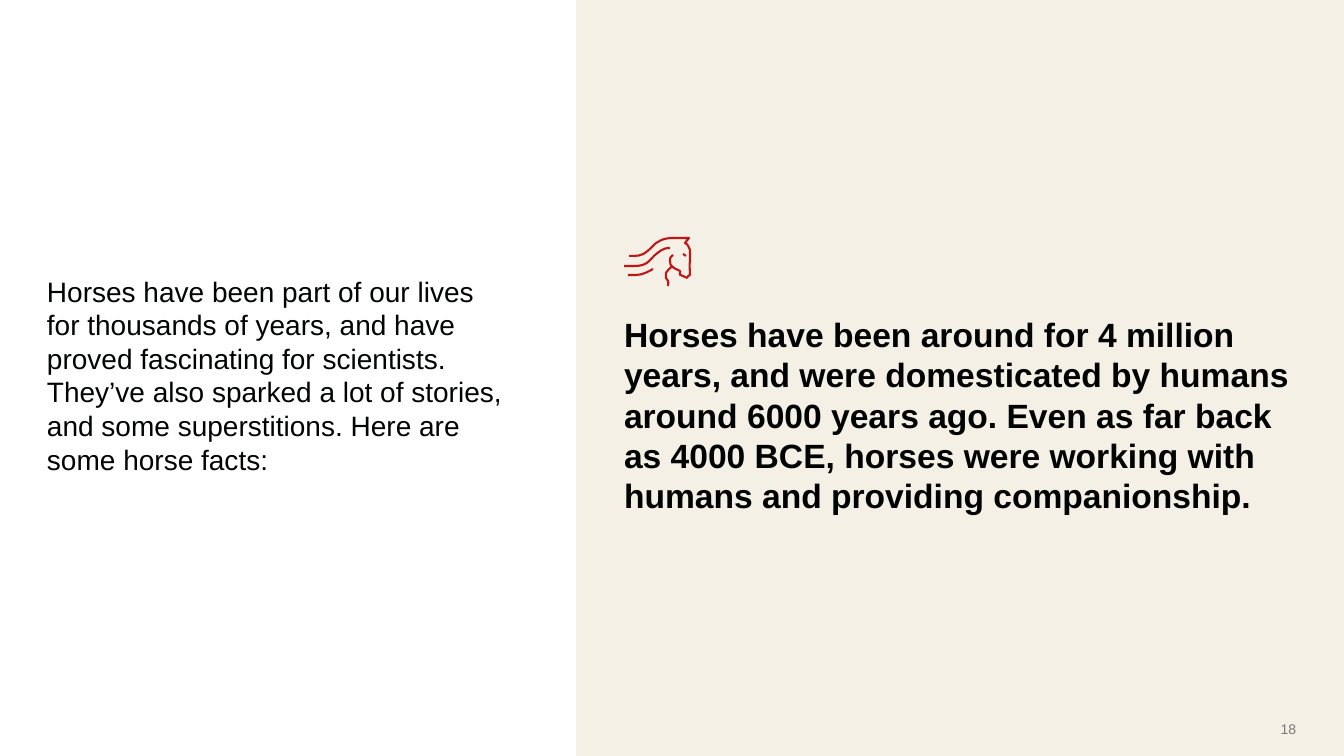
import lxml.etree
import pptx
import pptx.dml.color
import pptx.enum.shapes
import pptx.enum.text
import pptx.oxml.ns
import pptx.util

PX = 9144000 / 1008
ALIGN = pptx.enum.text.PP_ALIGN
ANCHOR = pptx.enum.text.MSO_ANCHOR

INTRO = (
    "Horses have been part of our lives \vfor thousands of years, and have "
    "proved fascinating for scientists. They’ve also sparked a lot of stories, "
    "and some superstitions. Here are some horse facts:"
)
FACT = (
    "Horses have been around for 4 million years, and were domesticated by "
    "humans around 6000 years ago. Even as far back as 4000 BCE, horses were "
    "working with humans and providing companionship."
)

# Each stroke is a start point, then three points for every cubic segment.
HORSE_STROKES = {
    "head and mane": [
        (673, 255),
        (671, 256), (669, 259), (670, 261),
        (670, 263), (670, 266), (674, 268),
        (676, 269), (678, 270), (680, 271),
        (680, 272), (680, 274), (680, 275),
        (681, 275), (685, 277), (687, 278),
        (687, 277), (689, 275), (690, 275),
        (690, 269), (689, 264), (690, 262),
        (690, 261), (690, 251), (690, 250),
        (689, 248), (688, 244), (685, 243),
        (687, 241), (688, 239), (689, 238),
        (684, 238), (678, 238), (673, 238),
        (664, 238), (657, 241), (652, 247),
        (645, 254), (641, 256), (634, 256),
        (633, 256), (632, 256), (629, 256),
    ],
    "middle mane": [
        (624, 266),
        (627, 266), (633, 266), (635, 266),
        (647, 266), (650, 260), (654, 256),
        (659, 252), (662, 248), (670, 248),
    ],
    "eye": [(683, 254), (684, 254), (685, 256), (686, 256)],
    "lower mane": [
        (653, 269),
        (648, 272), (642, 275), (636, 275),
        (633, 275), (631, 275), (628, 275),
    ],
    "neck": [
        (673, 266),
        (671, 267), (667, 271), (666, 273),
        (666, 274), (666, 277), (666, 278),
        (668, 279), (669, 282), (668, 286),
    ],
}


def px(n):
    return pptx.util.Emu(round(n * PX))


def rgb(value):
    return pptx.dml.color.RGBColor.from_string(value)


def bend(sp):
    """Turn every three line segments of a freeform into one cubic curve."""
    qn = pptx.oxml.ns.qn
    lines = list(sp.element.iter(qn("a:lnTo")))
    outline = lines[0].getparent()
    for i in range(0, len(lines), 3):
        curve = lxml.etree.SubElement(outline, qn("a:cubicBezTo"))
        for line in lines[i:i + 3]:
            curve.append(line[0])
            outline.remove(line)


class SlideBuilder:
    font = "Arial"
    ink = "010302"
    grey = "797979"
    cream = "F4F0E5"
    red = "BF1716"

    def __init__(self, prs):
        self.slide = prs.slides.add_slide(prs.slide_layouts[6])

    def panel(self, x, y, w, h, color):
        sp = self.slide.shapes.add_shape(
            pptx.enum.shapes.MSO_SHAPE.RECTANGLE, px(x), px(y), px(w), px(h))
        sp.shadow.inherit = False
        sp.fill.solid()
        sp.fill.fore_color.rgb = rgb(color)
        sp.line.fill.background()

    def text(self, text, x, y, w, h, *, size, color=ink, bold=False,
             align=ALIGN.LEFT, anchor=ANCHOR.TOP):
        sp = self.slide.shapes.add_textbox(px(x), px(y), px(w), px(h))
        tf = sp.text_frame
        tf.word_wrap = True
        tf.auto_size = pptx.enum.text.MSO_AUTO_SIZE.SHAPE_TO_FIT_TEXT
        tf.vertical_anchor = anchor
        tf.margin_left = tf.margin_top = tf.margin_right = tf.margin_bottom = 0
        p = tf.paragraphs[0]
        p.text = text
        p.alignment = align
        for r in p.runs:
            r.font.name = self.font
            r.font.size = pptx.util.Pt(size)
            r.font.bold = bold
            r.font.color.rgb = rgb(color)

    def stroke(self, points, color, width):
        """Draw an open, unfilled curve."""
        start, *rest = [(px(x), px(y)) for x, y in points]
        builder = self.slide.shapes.build_freeform(*start)
        builder.add_line_segments(rest, close=False)
        sp = builder.convert_to_shape()
        bend(sp)
        sp.shadow.inherit = False
        sp.fill.background()
        sp.line.color.rgb = rgb(color)
        sp.line.width = pptx.util.Pt(width)


def main():
    prs = pptx.Presentation()
    prs.slide_width, prs.slide_height = px(1344), px(756)
    s = SlideBuilder(prs)
    s.panel(576, 0, 768, 756, s.cream)
    s.text(INTRO, 47, 274, 481, 169, size=20)
    s.text(FACT, 624, 314, 672, 203, size=24, bold=True)
    for points in HORSE_STROKES.values():
        s.stroke(points, s.red, 1.5)
    s.text("18", 1210, 720, 86, 17, size=10, color=s.grey,
           align=ALIGN.RIGHT, anchor=ANCHOR.MIDDLE)
    prs.save("out.pptx")


if __name__ == "__main__":
    main()
